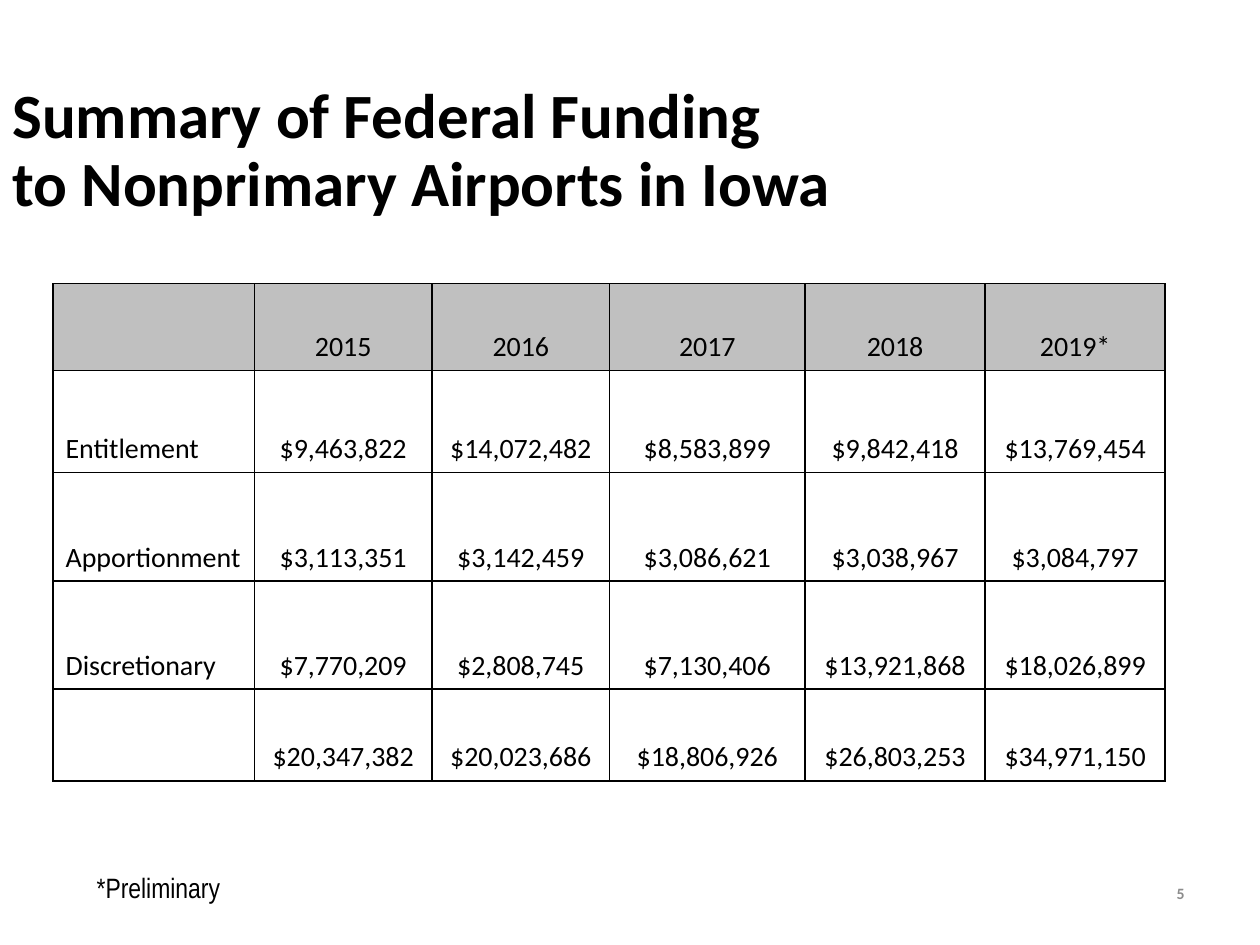
from lxml.etree import SubElement
from pptx import Presentation
from pptx.dml.color import RGBColor
from pptx.enum.text import MSO_ANCHOR, PP_ALIGN
from pptx.oxml import parse_xml
from pptx.oxml.ns import nsdecls, qn
from pptx.util import Cm, Pt

BLACK = RGBColor(0x00, 0x00, 0x00)
WHITE = RGBColor(0xFF, 0xFF, 0xFF)
SILVER = RGBColor(0xC0, 0xC0, 0xC0)
GRAY = RGBColor(0x8C, 0x8C, 0x8C)

FUNDING = [
    ["", "2015", "2016", "2017", "2018", "2019*"],
    ["Entitlement", "$9,463,822", "$14,072,482", "$8,583,899", "$9,842,418", "$13,769,454"],
    ["Apportionment", "$3,113,351", "$3,142,459", "$3,086,621", "$3,038,967", "$3,084,797"],
    ["Discretionary", "$7,770,209", "$2,808,745", "$7,130,406", "$13,921,868", "$18,026,899"],
    ["", "$20,347,382", "$20,023,686", "$18,806,926", "$26,803,253", "$34,971,150"],
]
COLUMN_WIDTHS = [4.06, 3.58, 3.58, 3.94, 3.63, 3.63]
ROW_HEIGHTS = [1.75, 2.06, 2.18, 2.18, 1.85]


class SlideWriter:
    def __init__(self, slide, font="Calibri", size=16, color=BLACK):
        self.slide = slide
        self.font = font
        self.size = size
        self.color = color

    def run(self, paragraph, words, font=None, size=None, color=None, bold=False):
        run = paragraph.add_run()
        run.text = words
        run.font.name = font or self.font
        run.font.size = Pt(size or self.size)
        run.font.color.rgb = color or self.color
        run.font.bold = bold

    def text(self, place, lines, align=PP_ALIGN.LEFT, anchor=MSO_ANCHOR.TOP,
             spacing=1.0, **style):
        """Add one paragraph whose lines are parted by line breaks."""
        frame = self.slide.shapes.add_textbox(*map(Cm, place)).text_frame
        frame.word_wrap = True
        frame.vertical_anchor = anchor
        paragraph = frame.paragraphs[0]
        paragraph.alignment = align
        paragraph.line_spacing = spacing
        for index, line in enumerate(lines):
            if index:
                paragraph.add_line_break()
            self.run(paragraph, line, **style)

    def border(self, cell, width=1):
        properties = cell._tc.get_or_add_tcPr()
        for index, side in enumerate(("lnL", "lnR", "lnT", "lnB")):
            line = parse_xml(f'<a:{side} {nsdecls("a")} w="{Pt(width)}"/>')
            fill = SubElement(line, qn("a:solidFill"))
            SubElement(fill, qn("a:srgbClr"), val=str(self.color))
            properties.insert(index, line)

    def table(self, left, top, widths, heights, rows):
        table = self.slide.shapes.add_table(
            len(rows), len(widths), Cm(left), Cm(top),
            Cm(sum(widths)), Cm(sum(heights))).table
        for column, width in zip(table.columns, widths):
            column.width = Cm(width)
        for row, height in zip(table.rows, heights):
            row.height = Cm(height)
        for r, values in enumerate(rows):
            for c, value in enumerate(values):
                cell = table.cell(r, c)
                cell.fill.solid()
                cell.fill.fore_color.rgb = WHITE if r else SILVER
                cell.vertical_anchor = MSO_ANCHOR.BOTTOM
                self.border(cell)
                if value:
                    paragraph = cell.text_frame.paragraphs[0]
                    paragraph.alignment = PP_ALIGN.CENTER if c else PP_ALIGN.LEFT
                    self.run(paragraph, value)


def main():
    deck = Presentation()
    deck.slide_width, deck.slide_height = Cm(25.4), Cm(19.05)
    writer = SlideWriter(deck.slides.add_slide(deck.slide_layouts[6]))

    writer.text((0, 1.47, 24.97, 3.18),
                ["Summary of Federal Funding ", "to Nonprimary Airports in Iowa"],
                anchor=MSO_ANCHOR.MIDDLE, spacing=0.9, size=36, bold=True)
    writer.table(1.07, 5.72, COLUMN_WIDTHS, ROW_HEIGHTS, FUNDING)
    writer.text((18.21, 17.35, 5.92, 1.32), ["5"], align=PP_ALIGN.RIGHT,
                anchor=MSO_ANCHOR.MIDDLE, size=9, color=GRAY, bold=True)
    writer.text((1.7, 17.42, 8.69, 1.63), ["*Preliminary"], font="Arial Narrow")

    deck.save("out.pptx")


if __name__ == "__main__":
    main()
